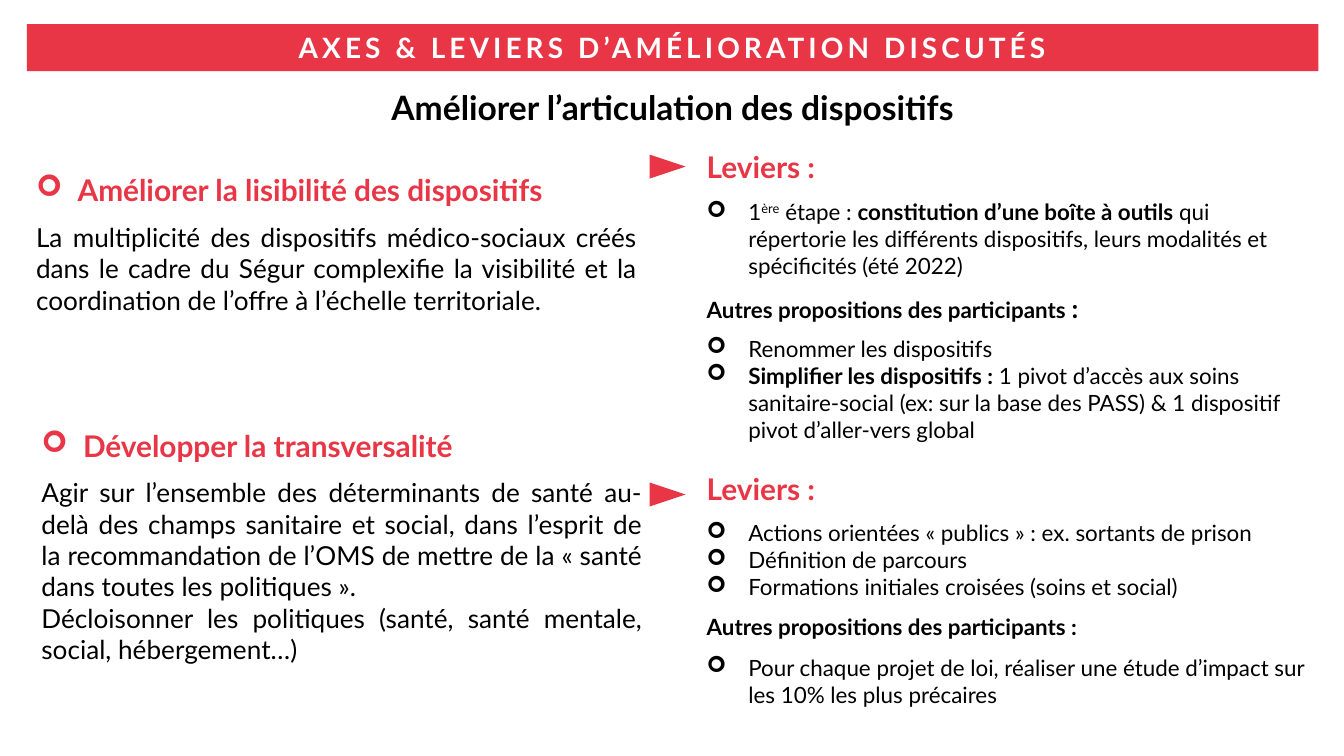
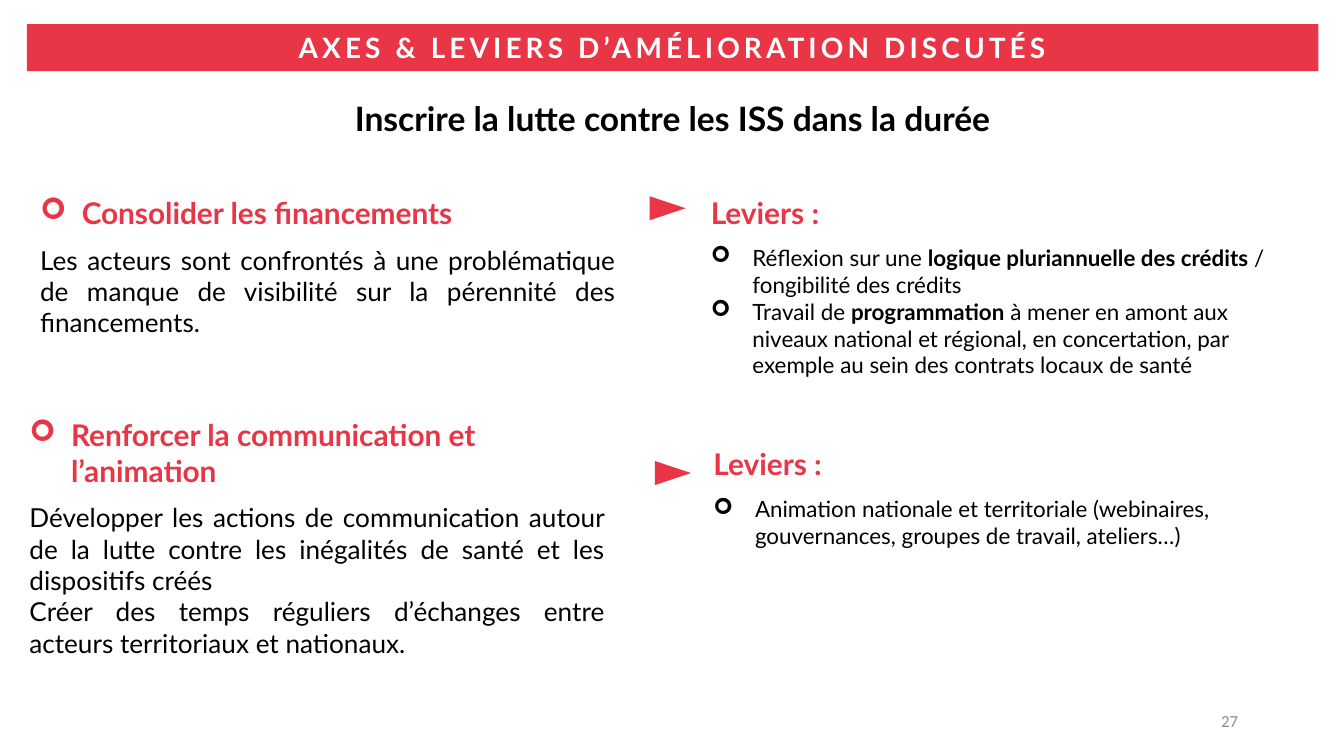
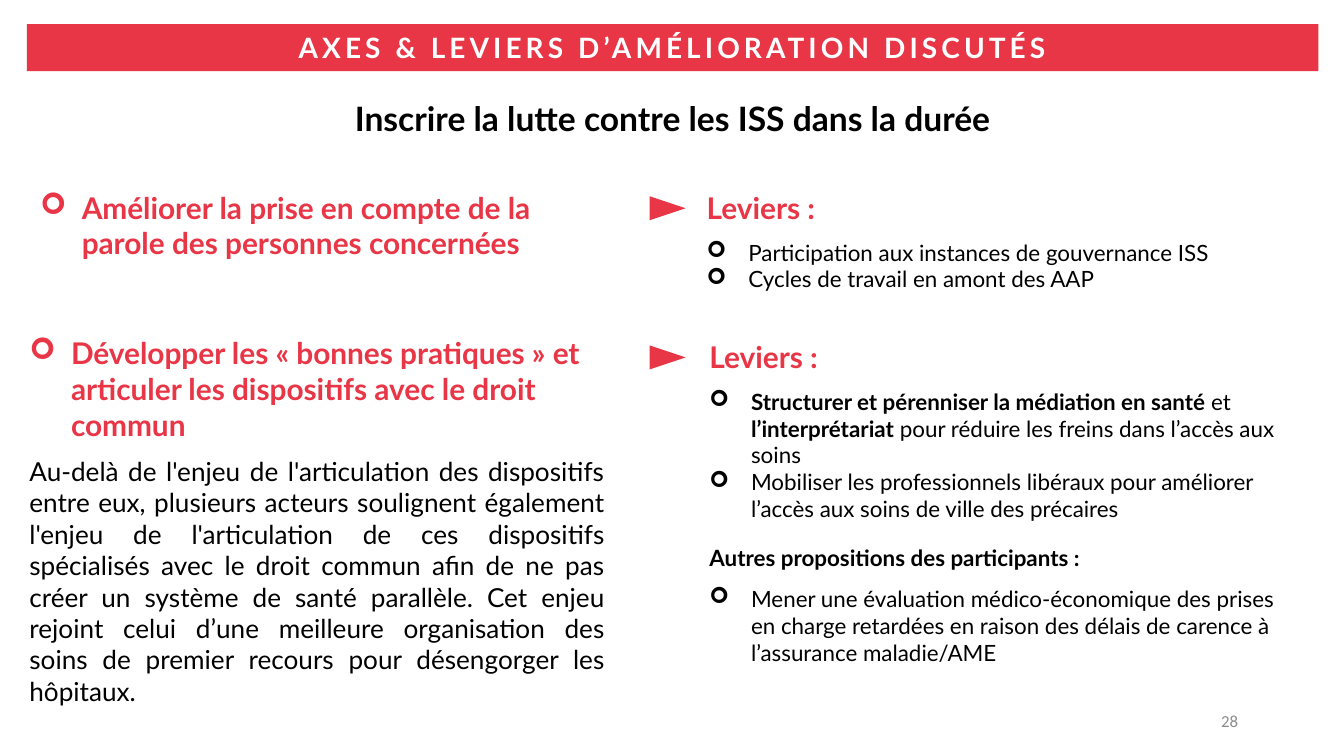
import lxml.etree
import pptx
import pptx.dml.color
import pptx.enum.shapes
import pptx.enum.text
import pptx.oxml.ns
import pptx.util

Inches = pptx.util.Inches
Pt = pptx.util.Pt
RGBColor = pptx.dml.color.RGBColor
Align = pptx.enum.text.PP_ALIGN
Anchor = pptx.enum.text.MSO_ANCHOR
Shapes = pptx.enum.shapes.MSO_SHAPE
qn = pptx.oxml.ns.qn

RED = RGBColor(0xE8, 0x36, 0x47)
BLACK = RGBColor(0, 0, 0)
WHITE = RGBColor(0xFF, 0xFF, 0xFF)
GREY = RGBColor(0x8C, 0x8C, 0x8C)
BAND_TEXT = "AXES & LEVIERS D’AMÉLIORATION DISCUTÉS"
GAP = 7.2

STYLES = {
    "axis": {"size": 16, "color": RED, "bold": True, "alignment": Align.LEFT},
    "text": {"size": 14, "color": BLACK, "bold": False, "alignment": Align.JUSTIFY},
    "levers": {"size": 16, "color": RED, "bold": True, "alignment": Align.LEFT},
    "lever": {"size": 12, "color": BLACK, "bold": False, "alignment": Align.LEFT},
    "others": {"size": 12, "color": BLACK, "bold": True, "alignment": Align.LEFT},
}
BULLETED = ("axis", "lever")

SLIDES = [
    {
        "title": "Améliorer l’articulation des dispositifs",
        "title_top": 0.6,
        "number": None,
        "arrows": [(4.88, 1.12), (4.88, 3.56)],
        "boxes": [
            (0.17, 1.23, 4.67, 1.65, [
                ("axis", "Améliorer la lisibilité des dispositifs"),
                ("text", "La multiplicité des dispositifs médico-sociaux créés dans le cadre du Ségur "
                         "complexifie la visibilité et la coordination de l’offre à l’échelle territoriale."),
            ]),
            (5.16, 1.06, 4.65, 2.31, [
                ("levers", "Leviers :"),
                ("lever", "1|^ère| étape : |*constitution d’une boîte à outils |qui répertorie les "
                          "différents dispositifs, leurs modalités et spécificités (été 2022)"),
                ("others", "Autres propositions des participants |+:"),
                ("lever", "Renommer les dispositifs", 6),
                ("lever", "*Simplifier les dispositifs : |1 pivot d’accès aux soins sanitaire-social "
                          "(ex: sur la base des PASS) & 1 dispositif pivot d’aller-vers global"),
            ]),
            (0.21, 3.13, 4.67, 2.12, [
                ("axis", "Développer la transversalité"),
                ("text", "Agir sur l’ensemble des déterminants de santé au-delà des champs sanitaire et "
                         "social, dans l’esprit de la recommandation de l’OMS de mettre de la « santé dans "
                         "toutes les politiques »."),
                ("text", "Décloisonner les politiques (santé, santé mentale, social, hébergement…)"),
            ]),
            (5.16, 3.45, 4.82, 1.88, [
                ("levers", "Leviers :"),
                ("lever", "Actions orientées « publics » : ex. sortants de prison"),
                ("lever", "Définition de parcours"),
                ("lever", "Formations initiales croisées (soins et social)"),
                ("others", "Autres propositions des participants :"),
                ("lever", "Pour chaque projet de loi, réaliser une étude d’impact sur les 10% les plus "
                          "précaires"),
            ]),
        ],
    },
    {
        "title": "Inscrire la lutte contre les ISS dans la durée",
        "title_top": 0.68,
        "number": "27",
        "arrows": [(4.92, 3.4), (4.88, 1.43)],
        "boxes": [
            (0.2, 1.4, 4.48, 1.18, [
                ("axis", "Consolider les financements"),
                ("text", "Les acteurs sont confrontés à une problématique de manque de visibilité sur la "
                         "pérennité des financements."),
            ]),
            (5.19, 1.4, 4.38, 1.68, [
                ("levers", "Leviers :"),
                ("lever", "Réflexion sur une |*logique pluriannuelle des crédits |/ fongibilité des "
                          "crédits"),
                ("lever", "Travail de |*programmation| à mener en amont aux niveaux national et régional, "
                          "en concertation, par exemple au sein des contrats locaux de santé"),
            ]),
            (0.12, 3.05, 4.48, 1.92, [
                ("axis", "Renforcer la communication et l’animation"),
                ("text", "Développer les actions de communication autour de la lutte contre les inégalités "
                         "de santé et les dispositifs créés"),
                ("text", "Créer des temps réguliers d’échanges entre acteurs territoriaux et nationaux."),
            ]),
            (5.21, 3.27, 4.62, 0.88, [
                ("levers", "Leviers :"),
                ("lever", "Animation nationale et territoriale (webinaires, gouvernances, groupes de "
                          "travail, ateliers…)"),
            ]),
        ],
    },
    {
        "title": "Inscrire la lutte contre les ISS dans la durée",
        "title_top": 0.68,
        "number": "28",
        "arrows": [(4.88, 2.54), (4.88, 1.43)],
        "boxes": [
            (0.2, 1.36, 4.48, 0.74, [
                ("axis", "Améliorer la prise en compte de la parole des personnes concernées"),
            ]),
            (0.12, 2.44, 4.48, 2.89, [
                ("axis", "Développer les « bonnes pratiques » et articuler les dispositifs avec le droit "
                         "commun"),
                ("text", "Au-delà de l'enjeu de l'articulation des dispositifs entre eux, plusieurs acteurs "
                         "soulignent également l'enjeu de l'articulation de ces dispositifs spécialisés "
                         "avec le droit commun afin de ne pas créer un système de santé parallèle. Cet "
                         "enjeu rejoint celui d’une meilleure organisation des soins de premier recours "
                         "pour désengorger les hôpitaux."),
            ]),
            (5.18, 2.47, 4.62, 2.56, [
                ("levers", "Leviers :"),
                ("lever", "*Structurer et pérenniser la médiation en santé |et |*l’interprétariat| pour "
                          "réduire les freins dans l’accès aux soins"),
                ("lever", "Mobiliser les professionnels libéraux pour améliorer l’accès aux soins de ville "
                          "des précaires"),
                ("others", "Autres propositions des participants :", 12),
                ("lever", "Mener une évaluation médico-économique des prises en charge retardées en raison "
                          "des délais de carence à l’assurance maladie/AME"),
            ]),
            (5.16, 1.36, 4.62, 0.88, [
                ("levers", "Leviers :"),
                ("lever", "Participation aux instances de gouvernance ISS"),
                ("lever", "Cycles de travail en amont des AAP"),
            ]),
        ],
    },
]


def format_paragraph(paragraph, size, color, bold, alignment, font_name="Lato"):
    paragraph.alignment = alignment
    paragraph.font.name = font_name
    paragraph.font.size = Pt(size)
    paragraph.font.bold = bold
    paragraph.font.color.rgb = color


def write_paragraph(paragraph, style, text, gap):
    if style in BULLETED:
        properties = paragraph._p.get_or_add_pPr()
        properties.set("marL", str(Inches(0.31)))
        properties.set("indent", str(-Inches(0.31)))
        lxml.etree.SubElement(properties, qn("a:buFont")).set("typeface", "Wingdings")
        lxml.etree.SubElement(properties, qn("a:buChar")).set("char", "➢")
    format_paragraph(paragraph, **STYLES[style])
    paragraph.space_before = Pt(gap)
    for part in text.split("|"):
        run = paragraph.add_run()
        run.text = part.lstrip("*^+")
        if part.startswith("*"):
            run.font.bold = True
        elif part.startswith("^"):
            run._r.get_or_add_rPr().set("baseline", "30000")
        elif part.startswith("+"):
            run.font.size = Pt(14)


presentation = pptx.Presentation()
presentation.slide_width = Inches(10)
presentation.slide_height = presentation.slide_width * 9 // 16

for content in SLIDES:
    slide = presentation.slides.add_slide(presentation.slide_layouts[5])

    title = slide.shapes.title
    title.left, title.top = Inches(0.28), Inches(content["title_top"])
    title.width, title.height = Inches(9.45), Inches(0.4)
    title.text_frame.text = content["title"]
    title.text_frame.word_wrap = True
    title.text_frame.auto_size = pptx.enum.text.MSO_AUTO_SIZE.NONE
    title.text_frame.vertical_anchor = Anchor.TOP
    format_paragraph(title.text_frame.paragraphs[0], 18, BLACK, True, Align.CENTER)

    band = slide.shapes.add_shape(Shapes.RECTANGLE, Inches(0.2), Inches(0.18), Inches(9.61), Inches(0.35))
    band.shadow.inherit = False
    band.fill.solid()
    band.fill.fore_color.rgb = RED
    band.line.fill.background()
    band.text_frame.text = BAND_TEXT
    band.text_frame.vertical_anchor = Anchor.MIDDLE
    format_paragraph(band.text_frame.paragraphs[0], 15, WHITE, True, Align.CENTER)
    band.text_frame.paragraphs[0].runs[0]._r.get_or_add_rPr().set("spc", "220")

    for left, top, width, height, paragraphs in content["boxes"]:
        box = slide.shapes.add_textbox(Inches(left), Inches(top), Inches(width), Inches(height))
        box.text_frame.word_wrap = True
        previous = None
        for style, text, *special_gap in paragraphs:
            if previous is None:
                paragraph, gap = box.text_frame.paragraphs[0], 0
            else:
                paragraph = box.text_frame.add_paragraph()
                gap = 0 if style == previous else GAP
            write_paragraph(paragraph, style, text, special_gap[0] if special_gap else gap)
            previous = style

    for left, top in content["arrows"]:
        arrow = slide.shapes.add_shape(
            Shapes.ISOSCELES_TRIANGLE, Inches(left), Inches(top), Inches(0.16), Inches(0.24))
        arrow.rotation = 90
        arrow.shadow.inherit = False
        arrow.fill.solid()
        arrow.fill.fore_color.rgb = RED
        arrow.line.color.rgb = RED
        arrow.line.width = Pt(1)
        outline = arrow.line._get_or_add_ln()
        lxml.etree.SubElement(outline, qn("a:miter")).set("lim", "800000")

    if content["number"]:
        number = slide.shapes.add_textbox(Inches(7.06), Inches(5.21), Inches(2.25), Inches(0.3))
        number.text_frame.word_wrap = True
        number.text_frame.vertical_anchor = Anchor.MIDDLE
        number.text_frame.text = content["number"]
        format_paragraph(number.text_frame.paragraphs[0], 9, GREY, False, Align.RIGHT, "Calibri")

presentation.save("out.pptx")
